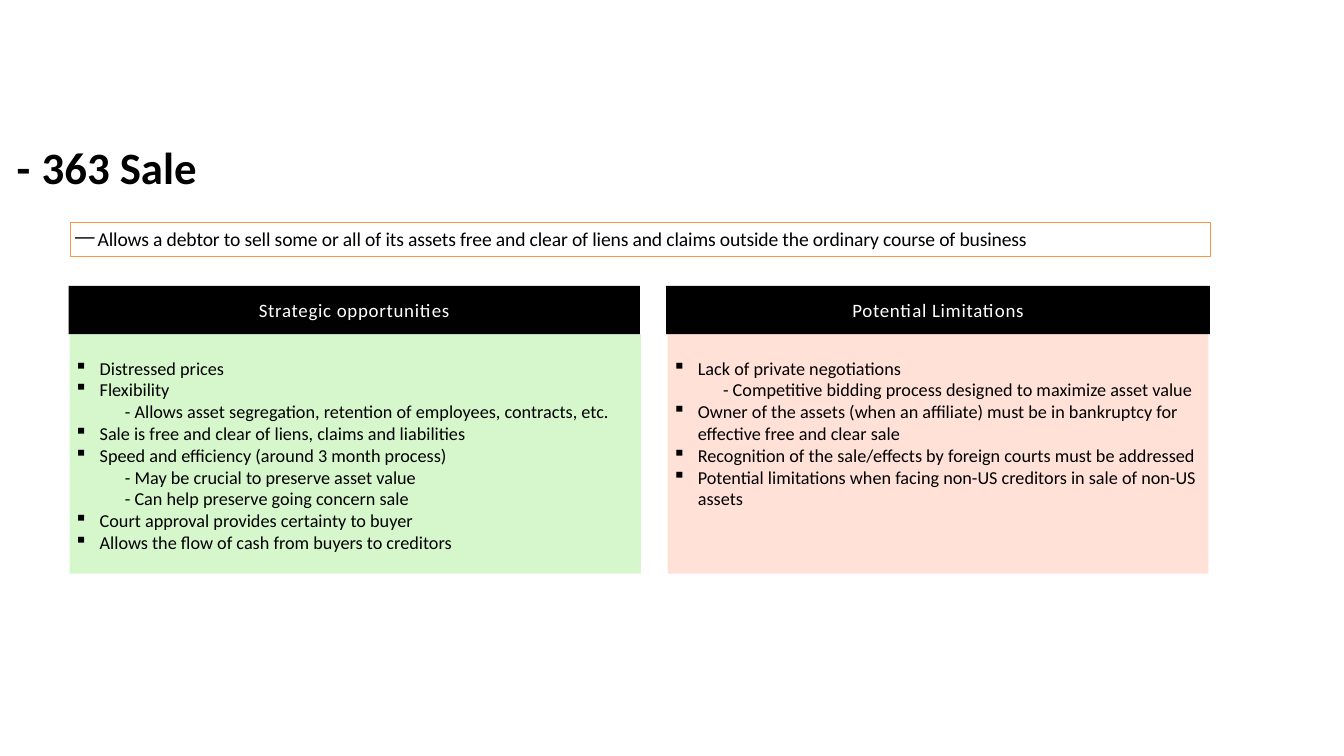
from dataclasses import dataclass

from lxml import etree
from pptx import Presentation
from pptx.dml.color import RGBColor
from pptx.enum.shapes import MSO_SHAPE
from pptx.enum.text import MSO_ANCHOR, PP_ALIGN
from pptx.oxml.ns import qn
from pptx.util import Inches, Pt

RECTANGLE = MSO_SHAPE.RECTANGLE
TOP, MIDDLE = MSO_ANCHOR.TOP, MSO_ANCHOR.MIDDLE
LEFT, CENTER = PP_ALIGN.LEFT, PP_ALIGN.CENTER


@dataclass(frozen=True)
class Theme:
    font: str = "Calibri"
    black: str = "000000"
    white: str = "FFFFFF"
    orange: str = "F79646"
    green: str = "32D700"
    pink: str = "FFE1D7"
    title_size: int = 64
    summary_size: int = 28
    heading_size: int = 27
    body_size: int = 26


THEME = Theme()
HEADING_TOP, HEADING_HEIGHT = 5.67, 0.96
BODY_TOP, BODY_HEIGHT = 6.63, 4.75
BULLET_INDENT, SUB_INDENT = 0.5, 1.0

# Each point is (level, wording); level 1 is a dashed sub-point
OPPORTUNITIES = [
    (0, "Distressed prices"),
    (0, "Flexibility"),
    (1, "- Allows asset segregation, retention of employees, contracts, etc."),
    (0, "Sale is free and clear of liens, claims and liabilities"),
    (0, "Speed and efficiency (around 3 month process)"),
    (1, "- May be crucial to preserve asset value"),
    (1, "- Can help preserve going concern sale"),
    (0, "Court approval provides certainty to buyer"),
    (0, "Allows the flow of cash from buyers to creditors"),
]
LIMITATIONS = [
    (0, "Lack of private negotiations"),
    (1, "- Competitive bidding process designed to maximize asset value"),
    (0, "Owner of the assets (when an affiliate) must be in bankruptcy for "
        "effective free and clear sale"),
    (0, "Recognition of the sale/effects by foreign courts must be addressed"),
    (0, "Potential limitations when facing non-US creditors in sale of non-US assets"),
]


def set_frame(frame, insets, anchor=TOP):
    left, top, right, bottom = (Inches(inset) for inset in insets)
    settings = {"word_wrap": True, "vertical_anchor": anchor,
                "margin_left": left, "margin_top": top,
                "margin_right": right, "margin_bottom": bottom}
    for name, value in settings.items():
        setattr(frame, name, value)


def indent(paragraph, margin, first_line=0.0, bullet=None, tab=None):
    properties = paragraph._p.get_or_add_pPr()
    properties.set("marL", str(Inches(margin)))
    properties.set("indent", str(Inches(first_line)))
    if bullet:
        etree.SubElement(properties, qn("a:buChar"), char=bullet)
    if tab:
        stops = etree.SubElement(properties, qn("a:tabLst"))
        etree.SubElement(stops, qn("a:tab"), pos=str(Inches(tab)), algn="l")


def write(paragraph, wording, size, color=THEME.black, bold=False,
          align=LEFT, spacing=0.0):
    paragraph.alignment = align
    run = paragraph.add_run()
    run.text = wording
    for name, value in {"name": THEME.font, "size": Pt(size), "bold": bold}.items():
        setattr(run.font, name, value)
    run.font.color.rgb = RGBColor.from_string(color)
    if spacing:
        run._r.get_or_add_rPr().set("spc", str(round(spacing * 100)))


def add_panel(slide, box, fill, line=None, opacity=None):
    panel = slide.shapes.add_shape(RECTANGLE, *(Inches(length) for length in box))
    panel.shadow.inherit = False
    panel.fill.solid()
    panel.fill.fore_color.rgb = RGBColor.from_string(fill)
    if opacity:
        color = panel.fill._xPr.find(".//" + qn("a:srgbClr"))
        etree.SubElement(color, qn("a:alpha"), val=str(opacity * 1000))
    if line:
        panel.line.color.rgb = RGBColor.from_string(line)
        panel.line.width = Pt(1)
    else:
        panel.line.fill.background()
    return panel.text_frame


def add_title(slide, wording):
    box = (-0.27, 2.67, 21.37, 7.92)
    frame = slide.shapes.add_textbox(*(Inches(length) for length in box)).text_frame
    set_frame(frame, (0.1, 0.1, 0.1, 0.1))
    title = frame.paragraphs[0]
    indent(title, 0, 0.5, tab=2)
    write(title, wording, THEME.title_size, bold=True)


def add_summary(slide, wording):
    frame = add_panel(slide, (1.39, 4.41, 22.62, 0.67), THEME.white, THEME.orange)
    set_frame(frame, (0.1, 0.1, 0.1, 0.1))
    summary = frame.paragraphs[0]
    indent(summary, 0.45, -0.45, "—")
    write(summary, wording, THEME.summary_size, spacing=-0.2)


def add_heading(slide, left, width, wording):
    frame = add_panel(slide, (left, HEADING_TOP, width, HEADING_HEIGHT), THEME.black)
    set_frame(frame, (0.1, 0, 0.1, 0), MIDDLE)
    write(frame.paragraphs[0], wording, THEME.heading_size, THEME.white,
          align=CENTER, spacing=1)


def add_points(slide, left, width, points, fill, opacity=None):
    frame = add_panel(slide, (left, BODY_TOP, width, BODY_HEIGHT), fill, opacity=opacity)
    set_frame(frame, (0.1, 0.45, 0.1, 0.05))
    for number, (level, wording) in enumerate(points):
        point = frame.add_paragraph() if number else frame.paragraphs[0]
        if level:
            indent(point, SUB_INDENT)
        else:
            indent(point, BULLET_INDENT, -BULLET_INDENT, "▪")
        write(point, wording, THEME.body_size)


def main():
    deck = Presentation()
    deck.slide_width, deck.slide_height = Inches(26.67), Inches(15)
    slide = deck.slides.add_slide(deck.slide_layouts[6])

    # Title and definition
    add_title(slide, "-\t363 Sale")
    add_summary(slide, "Allows a debtor to sell some or all of its assets free and clear "
                       "of liens and claims outside the ordinary course of business")

    # Opportunities column
    add_points(slide, 1.38, 11.34, OPPORTUNITIES, THEME.green, opacity=20)
    add_heading(slide, 1.36, 11.34, "Strategic opportunities")

    # Limitations column
    add_points(slide, 13.25, 10.73, LIMITATIONS, THEME.pink)
    add_heading(slide, 13.22, 10.79, "Potential Limitations")

    deck.save("out.pptx")


if __name__ == "__main__":
    main()
